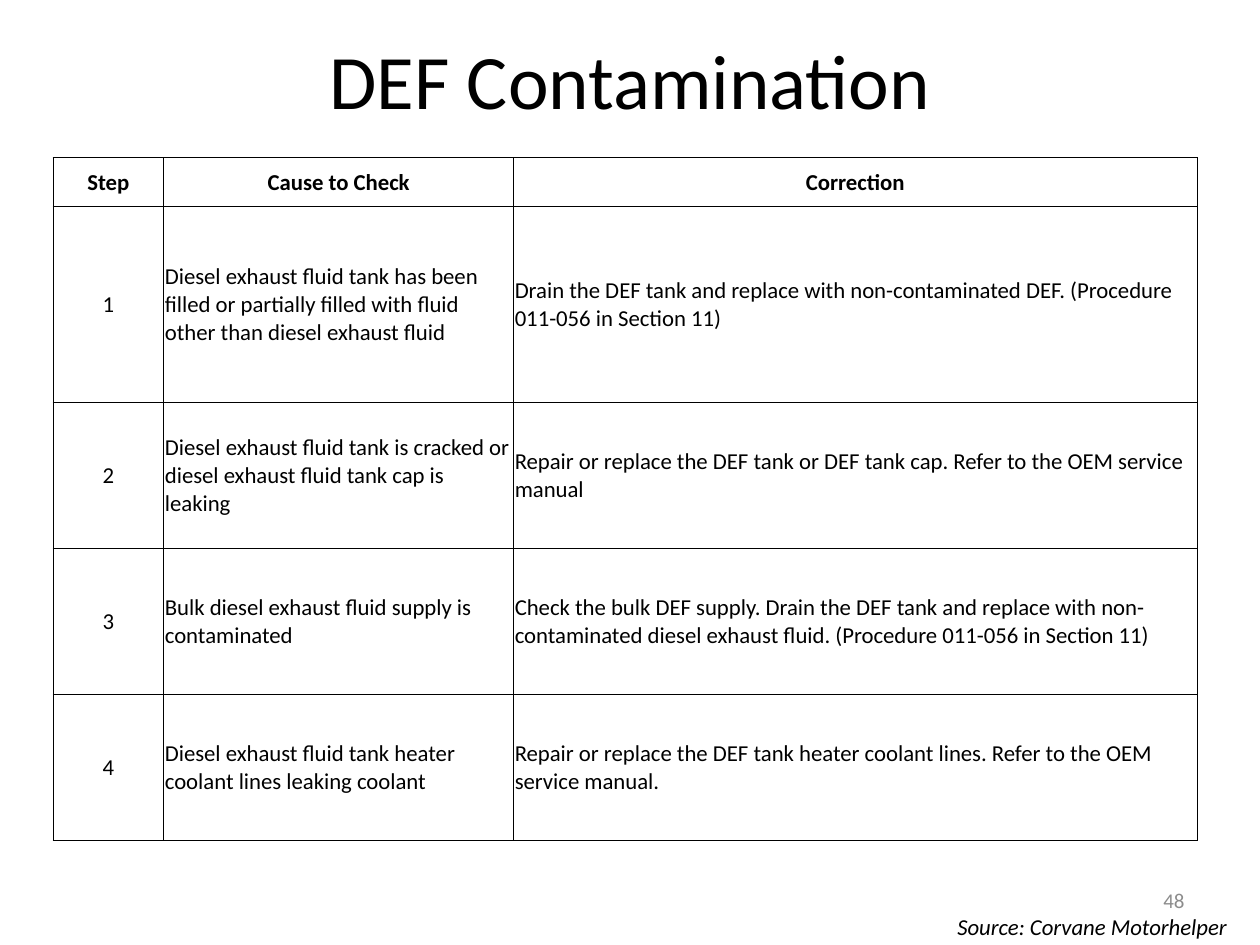
import dataclasses

import lxml.etree
import pptx
import pptx.dml.color
import pptx.enum.text
import pptx.oxml.ns
import pptx.util

ALIGN = pptx.enum.text.PP_ALIGN
ANCHOR = pptx.enum.text.MSO_ANCHOR
Inches = pptx.util.Inches


@dataclasses.dataclass(frozen=True)
class Theme:
    font: str = "Calibri"
    ink: str = "000000"
    muted: str = "8C8C8C"
    paper: str = "FFFFFF"
    title_size: int = 44
    body_size: int = 13
    number_size: int = 12
    rule_width: float = 0.5


THEME = Theme()
SLIDE_WIDTH, SLIDE_HEIGHT = 10, 7.5

HEADINGS = ("Step", "Cause to Check", "Correction")
CHECKS = (
    ("Diesel exhaust fluid tank has been filled or partially filled with fluid "
     "other than diesel exhaust fluid",
     "Drain the DEF tank and replace with non-contaminated DEF. "
     "(Procedure 011-056 in Section 11)"),
    ("Diesel exhaust fluid tank is cracked or diesel exhaust fluid tank cap is leaking",
     "Repair or replace the DEF tank or DEF tank cap. Refer to the OEM service manual"),
    ("Bulk diesel exhaust fluid supply is contaminated",
     "Check the bulk DEF supply. Drain the DEF tank and replace with "
     "non-contaminated diesel exhaust fluid. (Procedure 011-056 in Section 11)"),
    ("Diesel exhaust fluid tank heater coolant lines leaking coolant",
     "Repair or replace the DEF tank heater coolant lines. "
     "Refer to the OEM service manual."),
)
COLUMN_SHARES = (0.88, 2.78, 5.43)
ROW_SHARES = (0.39, 1.55, 1.16, 1.16, 1.16)


def rgb(value):
    return pptx.dml.color.RGBColor.from_string(value)


def write(frame, text, size, color=THEME.ink, align=ALIGN.LEFT, bold=False, italic=False):
    paragraph = frame.paragraphs[0]
    paragraph.alignment = align
    run = paragraph.add_run()
    run.text = text
    font = run.font
    font.name, font.size, font.color.rgb = THEME.font, pptx.util.Pt(size), rgb(color)
    font.bold, font.italic = bold, italic


def add_text(slide, box, text, size, anchor=ANCHOR.MIDDLE, **style):
    frame = slide.shapes.add_textbox(*map(Inches, box)).text_frame
    frame.word_wrap = True
    frame.vertical_anchor = anchor
    write(frame, text, size, **style)


def rule_cell(cell):
    """Draw the four borders, which must precede the cell fill in the XML."""
    properties = cell._tc.get_or_add_tcPr()
    for edge in ("a:lnL", "a:lnR", "a:lnT", "a:lnB"):
        line = lxml.etree.SubElement(properties, pptx.oxml.ns.qn(edge),
                                     w=str(pptx.util.Pt(THEME.rule_width)))
        fill = lxml.etree.SubElement(line, pptx.oxml.ns.qn("a:solidFill"))
        lxml.etree.SubElement(fill, pptx.oxml.ns.qn("a:srgbClr"), val=THEME.ink)


def fill_cell(cell, text, align, bold):
    rule_cell(cell)
    cell.fill.solid()
    cell.fill.fore_color.rgb = rgb(THEME.paper)
    cell.margin_left = cell.margin_right = cell.margin_top = Inches(0.01)
    cell.margin_bottom = 0
    cell.vertical_anchor = ANCHOR.MIDDLE
    write(cell.text_frame, text, THEME.body_size, align=align, bold=bold)


def add_check_table(slide, box):
    rows = [HEADINGS] + [(str(step), *check) for step, check in enumerate(CHECKS, 1)]
    table = slide.shapes.add_table(len(rows), len(HEADINGS), *map(Inches, box)).table
    table.first_row = table.horz_banding = False
    for column, share in zip(table.columns, COLUMN_SHARES):
        column.width = Inches(box[2] * share / sum(COLUMN_SHARES))
    for row, share in zip(table.rows, ROW_SHARES):
        row.height = Inches(box[3] * share / sum(ROW_SHARES))
    for r, texts in enumerate(rows):
        for c, text in enumerate(texts):
            align = ALIGN.CENTER if r == 0 or c == 0 else ALIGN.LEFT
            fill_cell(table.cell(r, c), text, align, bold=r == 0)


def add_footer(slide, box):
    left, top, width, height = box
    add_text(slide, (left, top + 0.45 * height, width, 0.55 * height),
             "Source: Corvane Motorhelper", THEME.body_size,
             anchor=ANCHOR.TOP, italic=True)
    add_text(slide, (left, top, 0.8 * width, 0.72 * height), "48", THEME.number_size,
             color=THEME.muted, align=ALIGN.RIGHT)


def main():
    deck = pptx.Presentation()
    deck.slide_width, deck.slide_height = Inches(SLIDE_WIDTH), Inches(SLIDE_HEIGHT)
    slide = deck.slides.add_slide(deck.slide_layouts[6])
    margin, title_height, footer_top = 0.05 * SLIDE_WIDTH, SLIDE_HEIGHT / 6, 6.95
    add_text(slide, (margin, 0, SLIDE_WIDTH - 2 * margin, title_height),
             "DEF Contamination", THEME.title_size, align=ALIGN.CENTER)
    add_check_table(slide, (0.42, title_height, 9.08, 5.42))
    add_footer(slide, (0.75 * SLIDE_WIDTH, footer_top,
                       0.25 * SLIDE_WIDTH, SLIDE_HEIGHT - footer_top))
    deck.save("out.pptx")


if __name__ == "__main__":
    main()
